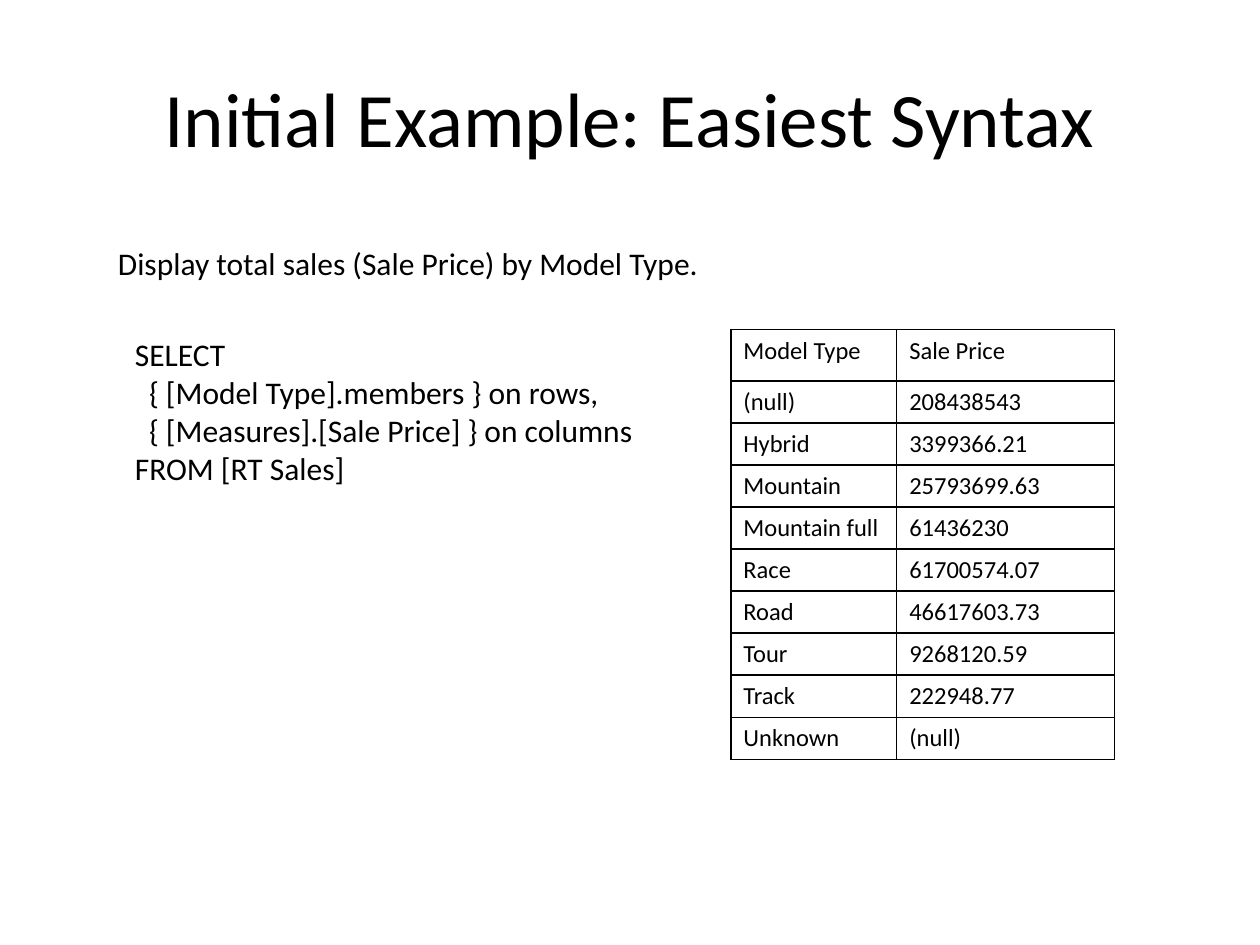
from dataclasses import dataclass

from lxml.etree import SubElement
from pptx import Presentation
from pptx.dml.color import RGBColor
from pptx.enum.text import MSO_ANCHOR as Anchor, MSO_AUTO_SIZE as AutoSize, PP_ALIGN as Align
from pptx.oxml.ns import qn
from pptx.util import Pt


@dataclass(frozen=True)
class Theme:
    font: str = "Calibri"
    ink: str = "000000"
    title: int = 44
    body: int = 18
    cell: int = 14


THEME = Theme()

QUERY = [
    ("SELECT", 0),
    ("{ [Model Type].members } on rows,", 8.1),
    ("{ [Measures].[Sale Price] } on columns", 8.1),
    ("FROM [RT Sales]", 0),
]

SALES = [
    ("Model Type", "Sale Price"),
    ("(null)", "208438543"),
    ("Hybrid", "3399366.21"),
    ("Mountain", "25793699.63"),
    ("Mountain full", "61436230"),
    ("Race", "61700574.07"),
    ("Road", "46617603.73"),
    ("Tour", "9268120.59"),
    ("Track", "222948.77"),
    ("Unknown", "(null)"),
]


def write(p, text, size=THEME.body, align=Align.LEFT, indent=0):
    p.alignment = align
    if indent:
        p._p.get_or_add_pPr().set("marL", str(int(Pt(indent))))
    r = p.add_run()
    r.text = text
    r.font.name = THEME.font
    r.font.size = Pt(size)
    r.font.color.rgb = RGBColor.from_string(THEME.ink)


def add_title(s, text):
    sp = s.shapes.title
    sp.left, sp.top, sp.width, sp.height = Pt(36), Pt(21.6), Pt(648), Pt(90)
    tf = sp.text_frame
    tf.vertical_anchor = Anchor.MIDDLE
    write(tf.paragraphs[0], text, size=THEME.title, align=Align.CENTER)


def add_text(s, lines, left, top, width, height):
    """Add a text box from (text, indent) lines."""
    sp = s.shapes.add_textbox(Pt(left), Pt(top), Pt(width), Pt(height))
    tf = sp.text_frame
    tf.word_wrap = False
    tf.auto_size = AutoSize.SHAPE_TO_FIT_TEXT
    for i, (text, indent) in enumerate(lines):
        p = tf.add_paragraph() if i else tf.paragraphs[0]
        write(p, text, indent=indent)


def add_borders(cell, width=1):
    tc_pr = cell._tc.get_or_add_tcPr()
    for side in ("a:lnL", "a:lnR", "a:lnT", "a:lnB"):
        ln = SubElement(tc_pr, qn(side), w=str(int(Pt(width))))
        fill = SubElement(ln, qn("a:solidFill"))
        SubElement(fill, qn("a:srgbClr"), val=THEME.ink)


def add_sales_table(s, left, top, widths, header_height, row_height):
    height = header_height + row_height * (len(SALES) - 1)
    table = s.shapes.add_table(len(SALES), len(widths), Pt(left), Pt(top),
                               Pt(sum(widths)), Pt(height)).table
    table.first_row = table.horz_banding = False
    for column, width in zip(table.columns, widths):
        column.width = Pt(width)
    for i, values in enumerate(SALES):
        table.rows[i].height = Pt(row_height if i else header_height)
        for j, value in enumerate(values):
            cell = table.cell(i, j)
            write(cell.text_frame.paragraphs[0], value, size=THEME.cell)
            add_borders(cell)
            cell.fill.background()


def main():
    prs = Presentation()
    prs.slide_width, prs.slide_height = Pt(720), Pt(540)
    s = prs.slides.add_slide(prs.slide_layouts.get_by_name("Title Only"))
    add_title(s, "Initial Example: Easiest Syntax")
    add_text(s, QUERY, 70, 188, 302.4, 94.5)
    add_text(s, [("Display total sales (Sale Price) by Model Type.", 0)], 60.3, 136, 350, 29)
    add_sales_table(s, 417.6, 188.4, widths=(94.8, 124.4), header_height=29.2, row_height=24)
    prs.save("out.pptx")


if __name__ == "__main__":
    main()
